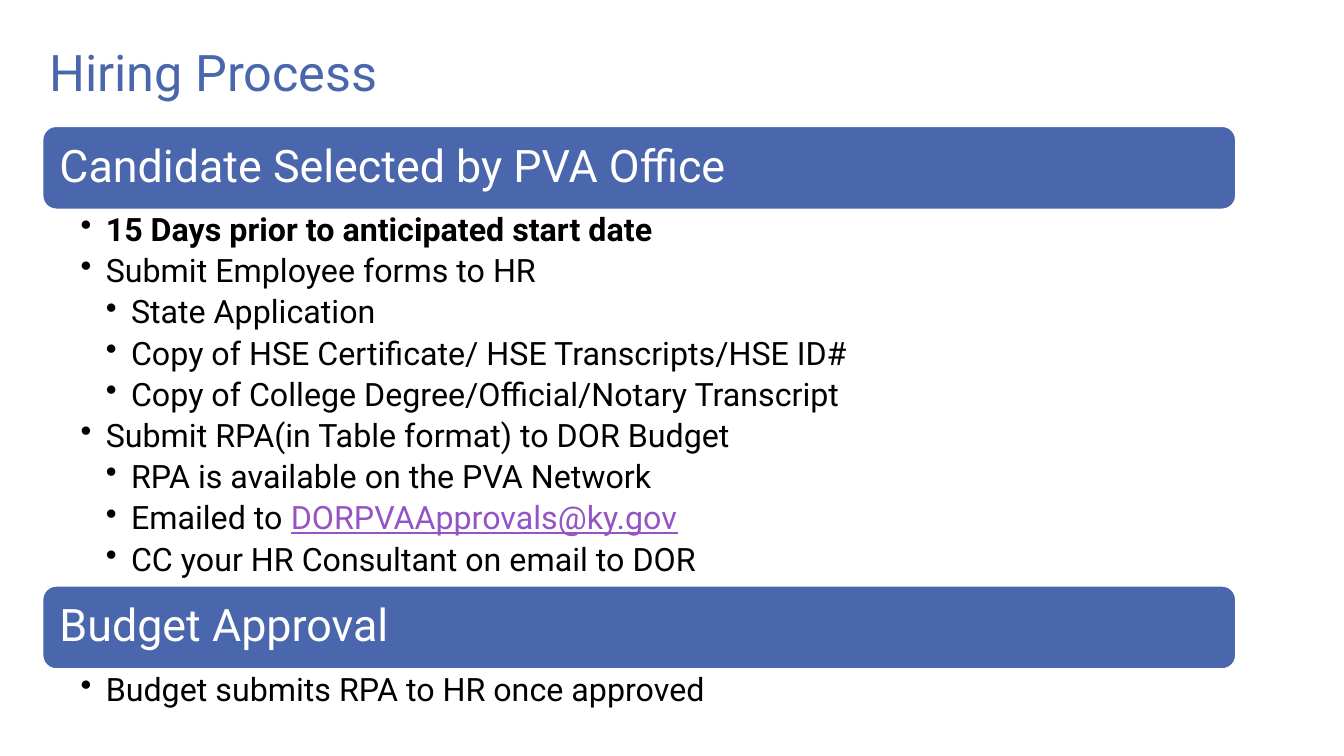
from dataclasses import dataclass

from lxml.etree import SubElement
from pptx import Presentation
from pptx.dml.color import RGBColor
from pptx.enum.shapes import MSO_SHAPE
from pptx.enum.text import MSO_ANCHOR, PP_ALIGN
from pptx.oxml.ns import qn
from pptx.util import Emu, Pt

EMU_PER_PX = 9144
FONT = "Roboto"
COLORS = {"blue": "4A66AC", "white": "FFFFFF", "black": "000000", "email": "9454C3"}
LEFT, WIDTH, BAND_HEIGHT, INDENT = 42, 1184, 83, 25


@dataclass(frozen=True)
class Bullet:
    text: str
    level: int = 1
    bold: bool = False
    email: str = ""


@dataclass(frozen=True)
class Step:
    heading: str
    top: int
    body_height: int
    bullets: tuple[Bullet, ...]


STEPS = (
    Step("Candidate Selected by PVA Office", 125, 374, (
        Bullet("15 Days prior to anticipated start date", bold=True),
        Bullet("Submit Employee forms to HR"),
        Bullet("State Application", 2),
        Bullet("Copy of HSE Certificate/ HSE Transcripts/HSE ID#", 2),
        Bullet("Copy of College Degree/Official/Notary Transcript", 2),
        Bullet("Submit RPA(in Table format) to DOR Budget"),
        Bullet("RPA is available on the PVA Network", 2),
        Bullet("Emailed to ", 2, email="DORPVAApprovals@ky.gov"),
        Bullet("CC your HR Consultant on email to DOR", 2),
    )),
    Step("Budget Approval", 581, 54, (
        Bullet("Budget submits RPA to HR once approved"),
    )),
)


def px(n: int) -> Emu:
    return Emu(n * EMU_PER_PX)


def rgb(name: str) -> RGBColor:
    return RGBColor.from_string(COLORS[name])


def set_frame(tf, anchor, left: int, top: int, right: int, bottom: int) -> None:
    tf.word_wrap = True
    tf.vertical_anchor = anchor
    tf.margin_left, tf.margin_top = px(left), px(top)
    tf.margin_right, tf.margin_bottom = px(right), px(bottom)


def add_run(p, text: str, size: int, color: str, bold: bool = False,
            underline: bool = False) -> None:
    r = p.add_run()
    r.text = text
    r.font.name = FONT
    r.font.size = Pt(size)
    r.font.color.rgb = rgb(color)
    r.font.bold = bold
    r.font.underline = underline


def set_spacing(p, after_percent: int) -> None:
    p.alignment = PP_ALIGN.LEFT
    p.line_spacing = 0.9
    after = SubElement(p._p.get_or_add_pPr(), qn("a:spcAft"))
    SubElement(after, qn("a:spcPct")).set("val", str(after_percent * 1000))


def add_title(s, text: str) -> None:
    tf = s.shapes.add_textbox(px(39), px(20), px(473), px(102)).text_frame
    set_frame(tf, MSO_ANCHOR.MIDDLE, 10, 5, 10, 5)
    add_run(tf.paragraphs[0], text, 36, "blue")


def add_band(s, step: Step) -> None:
    sp = s.shapes.add_shape(MSO_SHAPE.ROUNDED_RECTANGLE, px(LEFT), px(step.top),
                            px(WIDTH), px(BAND_HEIGHT))
    sp.shadow.inherit = False
    sp.fill.solid()
    sp.fill.fore_color.rgb = rgb("blue")
    sp.line.color.rgb = rgb("white")
    sp.line.width = Pt(1.5)
    set_frame(sp.text_frame, MSO_ANCHOR.MIDDLE, 13, 13, 13, 13)
    p = sp.text_frame.paragraphs[0]
    set_spacing(p, 35)
    add_run(p, step.heading, 32, "white")


def add_bullet(p, bullet: Bullet) -> None:
    p.level = bullet.level
    set_spacing(p, 20)
    pPr = p._p.get_or_add_pPr()
    pPr.set("marL", str(px(INDENT * bullet.level)))
    pPr.set("indent", str(-px(INDENT)))
    SubElement(pPr, qn("a:buChar")).set("char", "•")
    add_run(p, bullet.text, 23, "black", bullet.bold)
    if bullet.email:
        add_run(p, bullet.email, 23, "email", underline=True)


def add_body(s, step: Step) -> None:
    tf = s.shapes.add_textbox(px(LEFT), px(step.top + BAND_HEIGHT),
                              px(WIDTH), px(step.body_height)).text_frame
    set_frame(tf, MSO_ANCHOR.TOP, 38, 4, 23, 4)
    for i, bullet in enumerate(step.bullets):
        add_bullet(tf.add_paragraph() if i else tf.paragraphs[0], bullet)


def main() -> None:
    prs = Presentation()
    prs.slide_width, prs.slide_height = px(1333), px(750)
    s = prs.slides.add_slide(prs.slide_layouts[6])
    add_title(s, "Hiring Process")
    for step in STEPS:
        add_band(s, step)
        add_body(s, step)
    prs.save("out.pptx")


if __name__ == "__main__":
    main()
